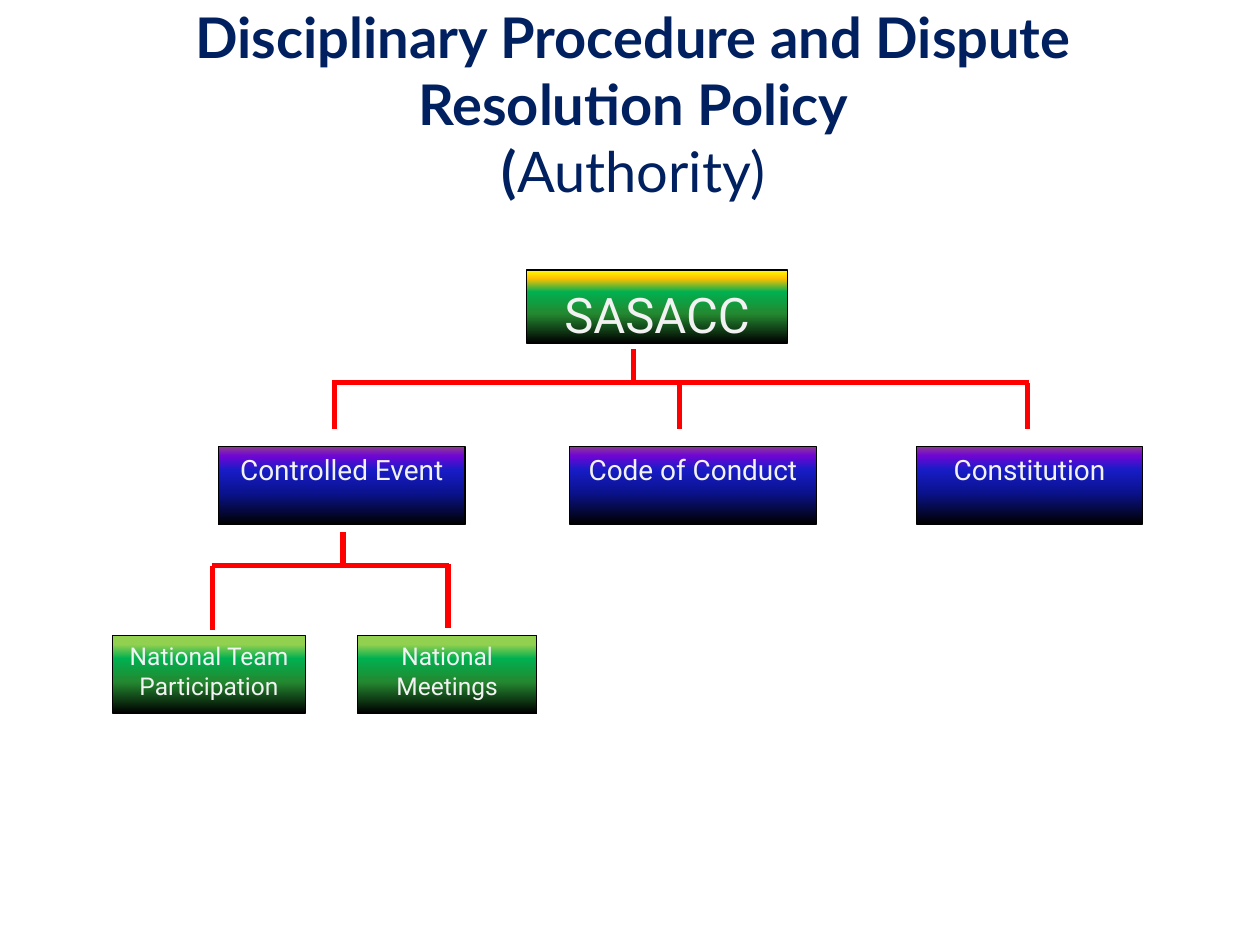
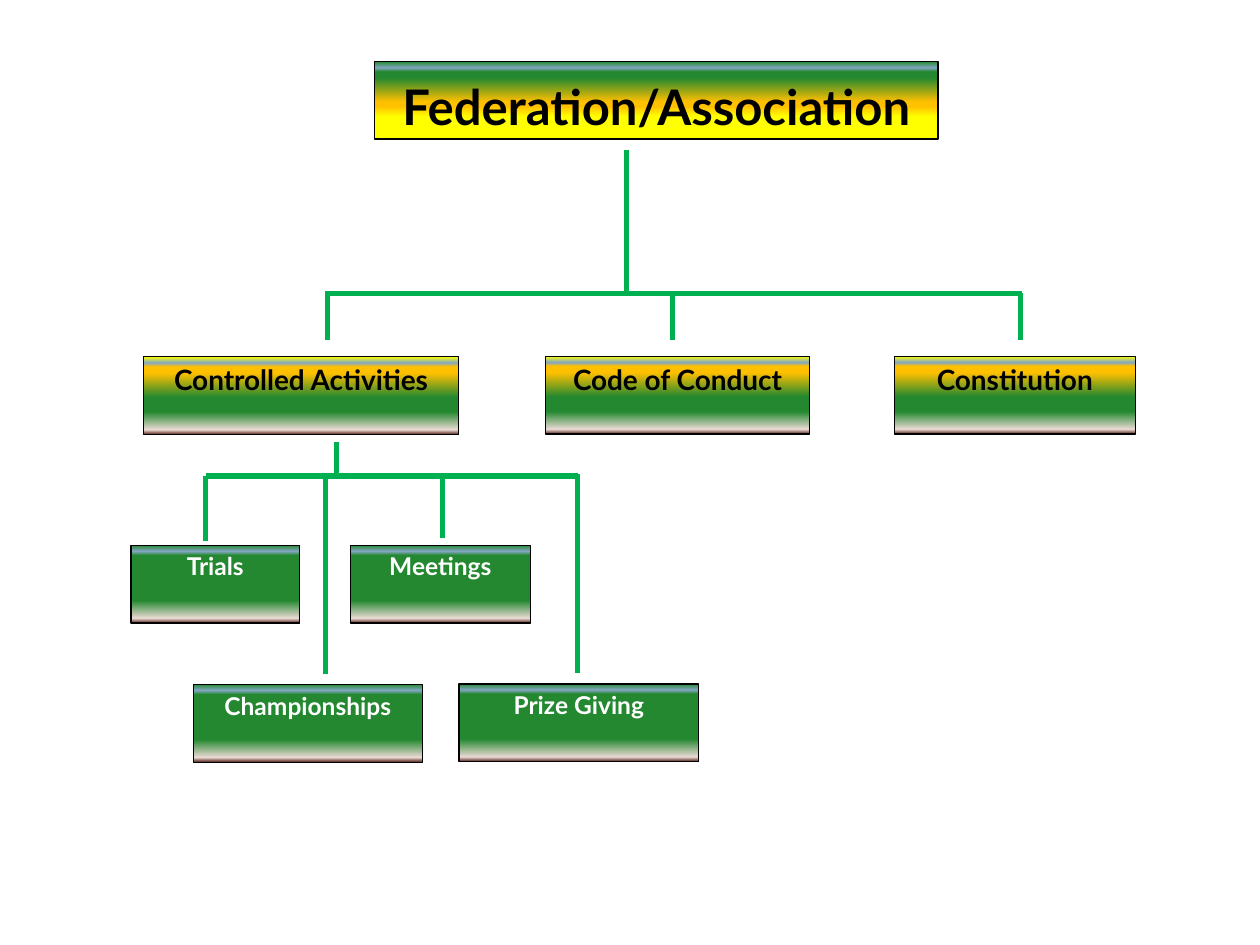
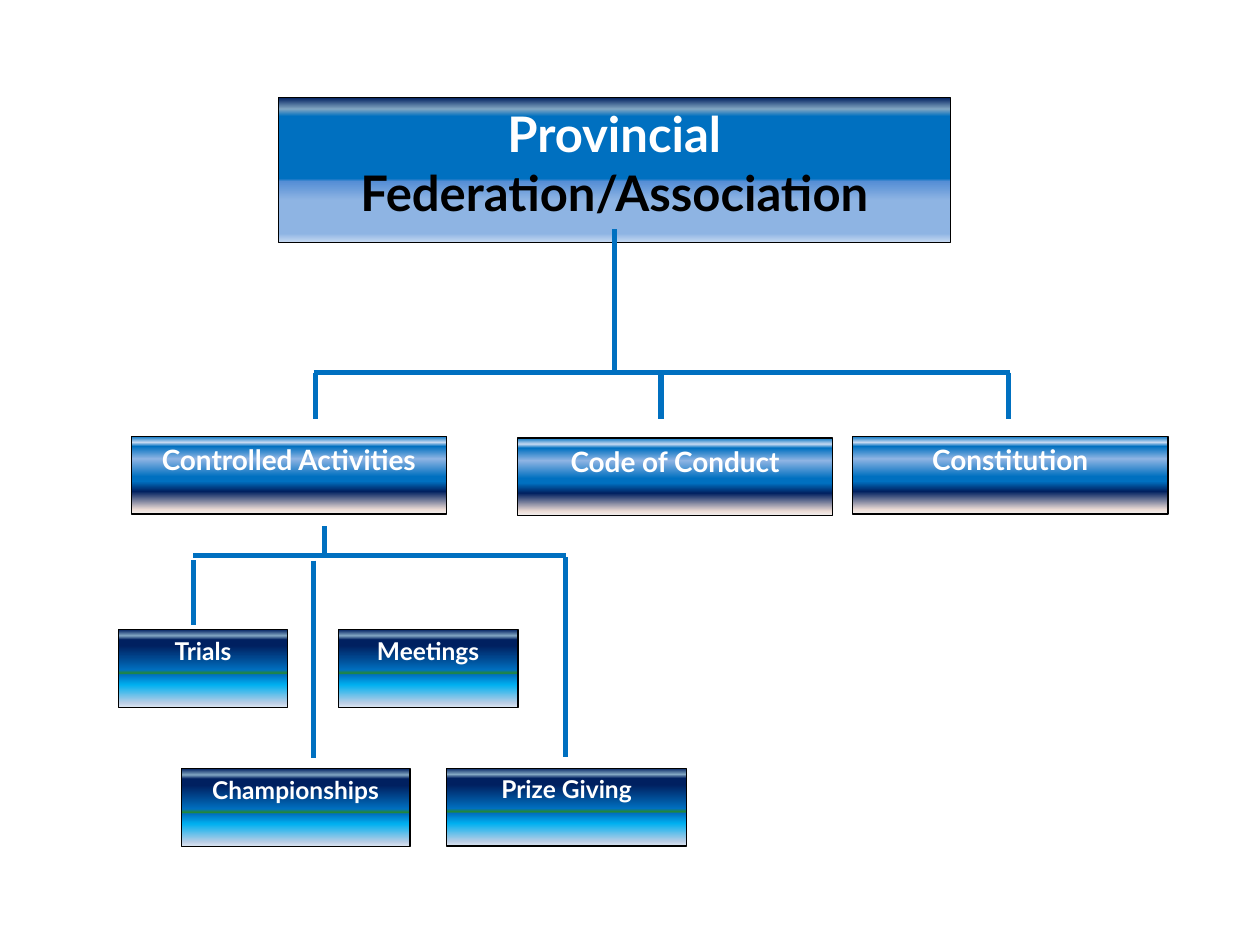
from dataclasses import dataclass
from lxml import etree
from pptx import Presentation
from pptx.dml.color import RGBColor
from pptx.enum.shapes import MSO_CONNECTOR, MSO_SHAPE
from pptx.enum.text import MSO_ANCHOR, MSO_AUTO_SIZE, PP_ALIGN
from pptx.oxml.ns import qn
from pptx.util import Pt

RECT = MSO_SHAPE.RECTANGLE
LINE = MSO_CONNECTOR.STRAIGHT
TOP, MIDDLE = MSO_ANCHOR.TOP, MSO_ANCHOR.MIDDLE
CENTER = PP_ALIGN.CENTER
NO_FIT = MSO_AUTO_SIZE.NONE

BLACK = RGBColor(0x00, 0x00, 0x00)
WHITE = RGBColor(0xFF, 0xFF, 0xFF)
PALE = RGBColor(0xF2, 0xF2, 0xF2)
RED = RGBColor(0xFF, 0x00, 0x00)
YELLOW = RGBColor(0xFF, 0xFF, 0x00)
GOLD = RGBColor(0xFF, 0xC0, 0x00)
LIME = RGBColor(0x92, 0xD0, 0x50)
GREEN = RGBColor(0x00, 0xB0, 0x50)
FOREST = RGBColor(0x24, 0x88, 0x30)
PLUM = RGBColor(0x8C, 0x3D, 0x91)
VIOLET = RGBColor(0x70, 0x05, 0xD4)
ROYAL = RGBColor(0x18, 0x1C, 0xC7)
INDIGO = RGBColor(0x0A, 0x12, 0x8C)
NAVY = RGBColor(0x00, 0x20, 0x60)
BLUE = RGBColor(0x00, 0x70, 0xC0)
CYAN = RGBColor(0x00, 0xB0, 0xF0)
STEEL = RGBColor(0x83, 0xA7, 0xC3)
AZURE = RGBColor(0x55, 0x8E, 0xD5)
SKY = RGBColor(0x8E, 0xB4, 0xE3)
MIST = RGBColor(0xC6, 0xD9, 0xF1)
HAZE = RGBColor(0xB9, 0xCD, 0xE5)
ICE = RGBColor(0xDC, 0xE6, 0xF2)
SAND = RGBColor(0xEB, 0xDA, 0xD4)
BROWN = RGBColor(0x55, 0x26, 0x1C)

DUSK = (0, 12, 30, 60, 100)
FLAG_FILL = list(zip(DUSK, (YELLOW, GOLD, GREEN, FOREST, BLACK)))
NIGHT_FILL = list(zip(DUSK, (PLUM, VIOLET, ROYAL, INDIGO, BLACK)))
LEAF_FILL = list(zip(DUSK, (LIME, LIME, GREEN, FOREST, BLACK)))
SUN_FILL = [(0, FOREST), (8, STEEL), (13, FOREST), (21, FOREST),
            (52, GOLD), (58, GOLD), (71, YELLOW), (100, YELLOW)]
FIELD_FILL = [(0, YELLOW), (8, STEEL), (13, GOLD), (21, GOLD),
              (52, FOREST), (71, FOREST), (94, SAND), (100, BROWN)]
GRASS_FILL = [(0, FOREST), (8, STEEL), (13, FOREST),
              (71, FOREST), (94, SAND), (100, BROWN)]
LAKE_FILL = [(0, NAVY), (8, STEEL), (13, BLUE), (56, BLUE),
             (58, AZURE), (71, SKY), (94, SKY), (100, MIST)]
WAVE_FILL = [(0, BLUE), (8, MIST), (13, BLUE), (29, SKY), (52, BLUE),
             (58, BLUE), (71, NAVY), (94, SAND), (100, PALE)]
SEA_FILL = [(0, NAVY), (8, STEEL), (13, NAVY), (21, NAVY), (52, BLUE),
            (56, FOREST), (58, BLUE), (71, CYAN), (94, HAZE), (100, ICE)]

BOX_H = 44.5
BAR_W = 398
DROPS = [(x, 0, 26.5) for x in (1, 198.5, 397)]


@dataclass
class Style:
    fill: list
    color: RGBColor
    size: float
    font: str = "Lato"
    bold: bool = True


def style_run(run, look, color=None):
    font = run.font
    font.name, font.size, font.bold = look.font, Pt(look.size), look.bold
    font.color.rgb = color or look.color


def shade(shape, stops):
    shape.fill.gradient()
    shape.fill.gradient_angle = 270
    items = shape._element.spPr.find(qn("a:gradFill")).find(qn("a:gsLst"))
    for item in list(items):
        items.remove(item)
    for pos, color in stops:
        stop = etree.SubElement(items, qn("a:gs"), pos=str(pos * 1000))
        etree.SubElement(stop, qn("a:srgbClr"), val=str(color))


def add_box(slide, text, left, top, width, look, height=BOX_H, space=1.0):
    box = slide.shapes.add_shape(RECT, Pt(left), Pt(top), Pt(width), Pt(height))
    box.shadow.inherit = False
    shade(box, look.fill)
    box.line.color.rgb = BLACK
    box.line.width = Pt(0.75)
    frame = box.text_frame
    frame.word_wrap = True
    frame.vertical_anchor = TOP
    frame.text = text
    para = frame.paragraphs[0]
    para.alignment = CENTER
    para.line_spacing = space
    style_run(para.runs[0], look)
    return box


def add_line(slide, x1, y1, x2, y2, color):
    line = slide.shapes.add_connector(LINE, Pt(x1), Pt(y1), Pt(x2), Pt(y2))
    line.line.color.rgb = color
    line.line.width = Pt(3)
    etree.SubElement(line._element.spPr, qn("a:effectLst"))


def add_comb(slide, left, top, width, stem, rise, drops, color):
    add_line(slide, left, top, left + width, top, color)
    add_line(slide, left + stem, top, left + stem, top - rise, color)
    for x, start, end in drops:
        add_line(slide, left + x, top + start, left + x, top + end, color)


def add_leaves(slide, left, top, look):
    for text, x, y, width in (("Trials", 0, 0, 96.5),
                              ("Championships", 35.8, 79.5, 130.7),
                              ("Prize Giving", 187.5, 79.2, 137),
                              ("Meetings", 125.5, 0, 102.7)):
        add_box(slide, text, left + x, top + y, width, look)


def add_title(slide, left, top, width, height):
    title = slide.shapes.title
    title.left, title.top = Pt(left), Pt(top)
    title.width, title.height = Pt(width), Pt(height)
    frame = title.text_frame
    frame.auto_size = NO_FIT
    frame.word_wrap = True
    frame.vertical_anchor = MIDDLE
    para = frame.paragraphs[0]
    para.text = "Disciplinary Procedure and Dispute Resolution Policy\v("
    para.alignment = CENTER
    para.add_run().text = "Authority)"
    for run in para.runs:
        style_run(run, Style([], NAVY, 32))
    para.runs[-1].font.bold = False


def policy_slide(deck):
    slide = deck.slides.add_slide(deck.slide_layouts[5])
    add_title(slide, 38, 22.3, 648, 73.5)
    root = Style(FLAG_FILL, PALE, 28, "Roboto", False)
    branch = Style(NIGHT_FILL, PALE, 16, "Roboto", False)
    leaf = Style(LEAF_FILL, PALE, 14, "Roboto", False)
    add_box(slide, "SASACC", 301, 154.2, 149, root, 41.8, 1.15)
    add_box(slide, "Controlled Event", 124.8, 255.3, 141, branch)
    add_box(slide, "Code of Conduct", 325.5, 255, 141, branch)
    add_box(slide, "Constitution", 523.8, 255, 129, branch)
    add_box(slide, "National Team Participation", 64.5, 363, 110, leaf)
    add_box(slide, "National Meetings", 204.3, 363, 102.5, leaf)
    add_comb(slide, 121, 323.3, 135.4, 75, 19.3,
             [(0.5, 0, 36.5), (135, -1, 35.5)], RED)
    add_comb(slide, 190, 218.8, BAR_W, 172, 19.3, DROPS, RED)


def federation_slide(deck):
    slide = deck.slides.add_slide(deck.slide_layouts[6])
    root = Style(SUN_FILL, BLACK, 28)
    branch = Style(FIELD_FILL, BLACK, 16)
    add_box(slide, "Federation/Association", 214, 35.3, 322, root, 44.2, 1.15)
    add_box(slide, "Controlled Activities", 82, 203.9, 180.2, branch)
    add_box(slide, "Code of Conduct", 311.8, 203.6, 150.8, branch)
    add_box(slide, "Constitution", 511.2, 203.6, 137.6, branch)
    add_leaves(slide, 74.8, 311.6, Style(GRASS_FILL, WHITE, 14))
    add_comb(slide, 117.5, 272, 213, 75, 19.5,
             [(0, 0, 37), (68.5, 0, 113), (135.3, -1, 35.7),
              (212.4, -1, 112.3)], GREEN)
    add_comb(slide, 186, 167.7, BAR_W, 172, 82, DROPS, GREEN)


def province_slide(deck):
    slide = deck.slides.add_slide(deck.slide_layouts[6])
    root = Style(LAKE_FILL, WHITE, 28)
    branch = Style(WAVE_FILL, WHITE, 16)
    head = add_box(slide, "Provincial", 159, 55.7, 384, root, 82.8)
    tail = head.text_frame.paragraphs[0].add_run()
    tail.text = " Federation/Association"
    style_run(tail, root, BLACK)
    add_box(slide, "Controlled Activities", 75, 249.3, 180.2, branch)
    add_box(slide, "Code of Conduct", 295.7, 250.3, 180.2, branch)
    add_box(slide, "Constitution", 487.2, 249.3, 180.2, branch)
    add_leaves(slide, 67.8, 359.8, Style(SEA_FILL, WHITE, 14))
    add_comb(slide, 110.3, 317.4, 213, 75, 16.8,
             [(0.3, 2.8, 39.8), (68.8, 3, 115.8), (212.7, 1, 115)], BLUE)
    add_comb(slide, 179.2, 212.9, BAR_W, 172, 82, DROPS, BLUE)


def main():
    deck = Presentation()
    deck.slide_width, deck.slide_height = Pt(720), Pt(540)
    policy_slide(deck)
    federation_slide(deck)
    province_slide(deck)
    deck.save("out.pptx")


if __name__ == "__main__":
    main()
